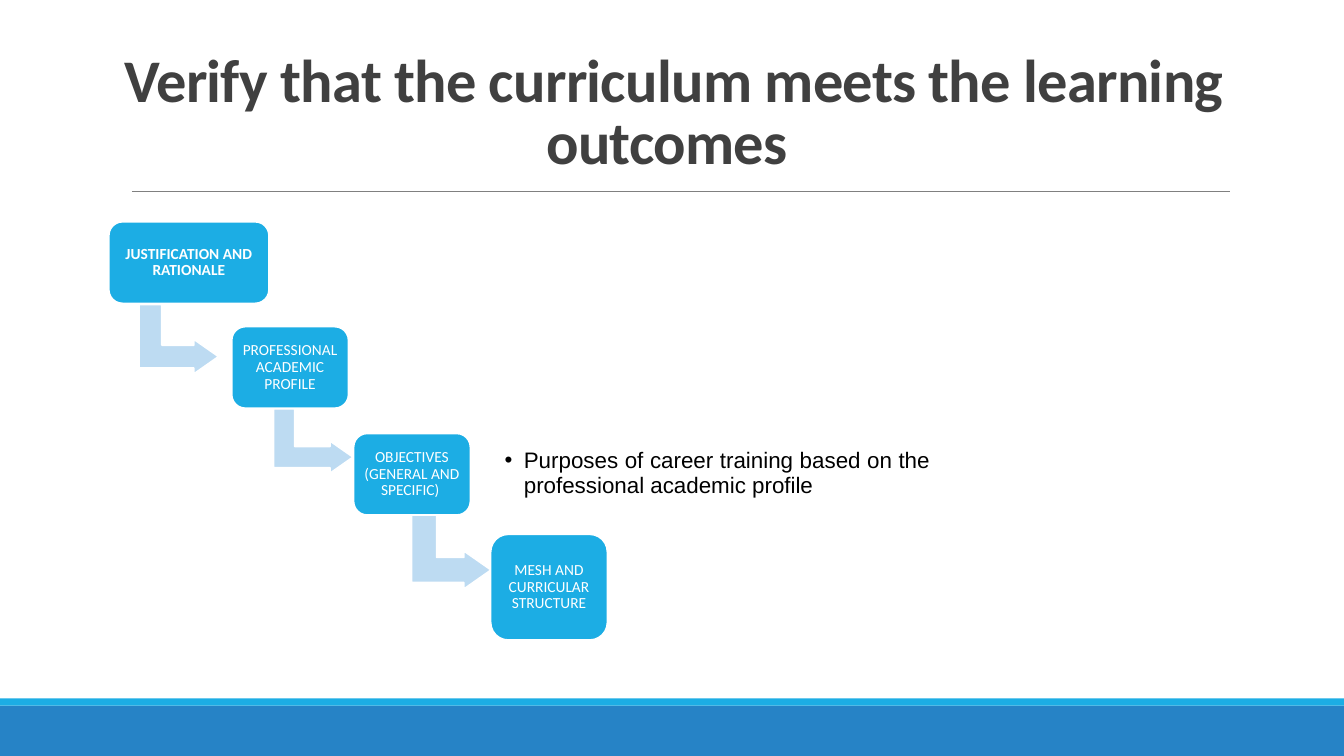
import dataclasses
import typing

import lxml.etree
import pptx
import pptx.dml.color
import pptx.enum.shapes
import pptx.enum.text
import pptx.oxml.ns
import pptx.util

Inches = pptx.util.Inches
Pt = pptx.util.Pt
qn = pptx.oxml.ns.qn
MSO_SHAPE = pptx.enum.shapes.MSO_SHAPE
PP_ALIGN = pptx.enum.text.PP_ALIGN
MSO_ANCHOR = pptx.enum.text.MSO_ANCHOR

BRIGHT_BLUE = "1CADE4"
DEEP_BLUE = "2683C6"
PALE_BLUE = "BDDBF2"
WHITE = "FFFFFF"
SLIDE_WIDTH = 13.34
ARROW_HEIGHT = 0.79
STEP_INSET = 0.04


@dataclasses.dataclass
class Box:
    left: float
    top: float
    width: float
    height: float


@dataclasses.dataclass
class TextFormat:
    size: float
    color: str
    font: str = "Calibri"
    bold: bool = False
    alignment: typing.Any = PP_ALIGN.CENTER
    line_spacing: float = 0.9
    anchor: typing.Any = MSO_ANCHOR.MIDDLE
    inset_x: float = STEP_INSET
    inset_y: float = STEP_INSET


@dataclasses.dataclass
class Step:
    text: str
    box: Box
    bold: bool = False
    arrow: typing.Optional[Box] = None


STEPS = [
    Step("JUSTIFICATION AND RATIONALE", Box(1.08, 2.2, 1.59, 0.81), True,
         Box(1.43, 2.97, 0.69, ARROW_HEIGHT)),
    Step("PROFESSIONAL ACADEMIC PROFILE", Box(2.3, 3.24, 1.16, 0.81),
         arrow=Box(2.79, 3.98, 0.64, ARROW_HEIGHT)),
    Step("OBJECTIVES (GENERAL AND SPECIFIC) ", Box(3.51, 4.3, 1.16, 0.81),
         arrow=Box(4.1, 5.07, 0.76, ARROW_HEIGHT)),
    Step("MESH AND CURRICULAR STRUCTURE", Box(4.87, 5.3, 1.16, 1.05)),
]


def rgb(value: str) -> pptx.dml.color.RGBColor:
    return pptx.dml.color.RGBColor.from_string(value)


def set_attributes(target: typing.Any, values: dict) -> None:
    for name, value in values.items():
        setattr(target, name, value)


def lengths(box: Box) -> list:
    return [Inches(value) for value in dataclasses.astuple(box)]


def add_filled_shape(slide, kind, box: Box, fill: str,
                     outline: typing.Optional[str] = None,
                     adjustments: typing.Sequence[float] = ()):
    shape = slide.shapes.add_shape(kind, *lengths(box))
    shape.shadow.inherit = False
    shape.fill.solid()
    shape.fill.fore_color.rgb = rgb(fill)
    if outline:
        shape.line.color.rgb = rgb(outline)
        shape.line.width = Pt(1.25)
    else:
        shape.line.fill.background()
    for index, value in enumerate(adjustments):
        shape.adjustments[index] = value
    return shape


def write_text(shape, text: str, style: TextFormat):
    """Fill the shape with one formatted paragraph and return it."""
    set_attributes(shape.text_frame, {
        "word_wrap": True,
        "vertical_anchor": style.anchor,
        "margin_left": Inches(style.inset_x),
        "margin_right": Inches(style.inset_x),
        "margin_top": Inches(style.inset_y),
        "margin_bottom": Inches(style.inset_y),
    })
    paragraph = shape.text_frame.paragraphs[0]
    set_attributes(paragraph, {"alignment": style.alignment, "line_spacing": style.line_spacing})
    run = paragraph.add_run()
    run.text = text
    set_attributes(run.font, {"name": style.font, "size": Pt(style.size), "bold": style.bold})
    run.font.color.rgb = rgb(style.color)
    return paragraph


def add_title(slide) -> None:
    title = slide.shapes.add_textbox(*lengths(Box(0.16, 0.65, 13.05, 1.15)))
    style = TextFormat(43.2, "404040", bold=True, line_spacing=0.85,
                       anchor=MSO_ANCHOR.BOTTOM, inset_x=0.1, inset_y=0.05)
    paragraph = write_text(title, "Verify that the curriculum meets the learning outcomes ", style)
    paragraph.runs[0].font._element.set("spc", "-50")


def add_title_rule(slide) -> None:
    rule = slide.shapes.add_connector(
        pptx.enum.shapes.MSO_CONNECTOR.STRAIGHT,
        Inches(1.31), Inches(1.9), Inches(12.21), Inches(1.9))
    rule.line.color.rgb = rgb("808080")
    rule.line.width = Pt(0.5)
    lxml.etree.SubElement(rule._element.spPr, qn("a:effectLst"))


def add_step(slide, step: Step) -> None:
    if step.arrow:
        arrow = add_filled_shape(slide, MSO_SHAPE.BENT_UP_ARROW, step.arrow,
                                 PALE_BLUE, WHITE, (0.328, 0.25, 0.358))
        arrow.rotation = 90
    box = add_filled_shape(slide, MSO_SHAPE.ROUNDED_RECTANGLE, step.box,
                           BRIGHT_BLUE, WHITE, (0.167,))
    write_text(box, step.text, TextFormat(11, WHITE, bold=step.bold))


def add_objectives_note(slide) -> None:
    note = slide.shapes.add_textbox(*lengths(Box(4.94, 4.37, 4.36, 0.66)))
    style = TextFormat(16, "000000", font="Arial", alignment=PP_ALIGN.JUSTIFY,
                       inset_x=0.07, inset_y=0.07)
    paragraph = write_text(
        note, "Purposes of career training based on the professional academic profile", style)
    properties = paragraph._p.get_or_add_pPr()
    indent = Inches(0.19)
    properties.set("marL", str(indent))
    properties.set("indent", str(-indent))
    lxml.etree.SubElement(properties, qn("a:buFont"), typeface="Arial")
    lxml.etree.SubElement(properties, qn("a:buChar"), char="•")


def main() -> None:
    presentation = pptx.Presentation()
    set_attributes(presentation, {"slide_width": Inches(SLIDE_WIDTH), "slide_height": Inches(7.5)})
    slide = presentation.slides.add_slide(presentation.slide_layouts[6])
    add_filled_shape(slide, MSO_SHAPE.RECTANGLE, Box(0, 7, SLIDE_WIDTH, 0.5), DEEP_BLUE)
    add_filled_shape(slide, MSO_SHAPE.RECTANGLE, Box(0, 6.93, SLIDE_WIDTH, 0.07), BRIGHT_BLUE)
    add_title_rule(slide)
    add_title(slide)
    for step in STEPS:
        add_step(slide, step)
    add_objectives_note(slide)
    presentation.save("out.pptx")


if __name__ == "__main__":
    main()
